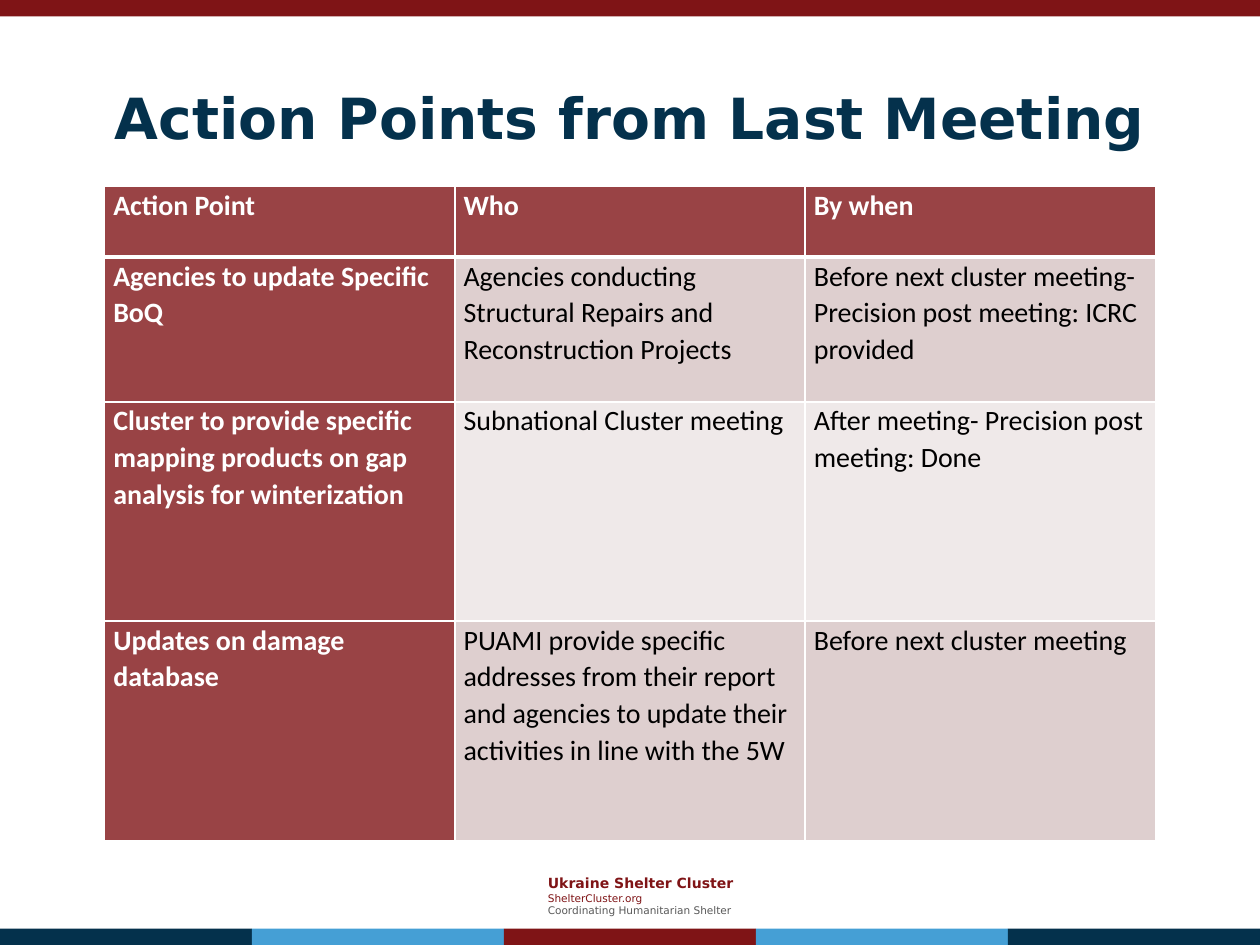
from lxml.etree import SubElement
from pptx import Presentation
from pptx.dml.color import RGBColor
from pptx.enum.shapes import MSO_SHAPE as SHAPE
from pptx.enum.text import MSO_ANCHOR as ANCHOR, PP_ALIGN as ALIGN
from pptx.oxml.ns import qn
from pptx.util import Inches, Pt

COLORS = {
    "red": "7F1416", "navy": "04314C", "blue": "459FD5", "gray": "595959",
    "header": "994345", "band_dark": "DECFCF", "band_light": "EFE9E9",
    "white": "FFFFFF", "black": "000000",
}
HEADING_FONT, TABLE_FONT = "DejaVu Sans", "Calibri"

ROWS = [
    ("Action Point", "Who", "By when"),
    ("Agencies to update Specific BoQ",
     "Agencies conducting Structural Repairs and Reconstruction Projects",
     "Before next cluster meeting- Precision post meeting: ICRC provided"),
    ("Cluster to provide specific mapping products on gap analysis for winterization",
     "Subnational Cluster meeting",
     "After meeting- Precision post meeting: Done"),
    ("Updates on damage database",
     "PUAMI provide specific addresses from their report and agencies to "
     "update their activities in line with the 5W",
     "Before next cluster meeting"),
]
ROW_HEIGHTS = [0.56, 1.15, 1.74, 1.74]
FOOTER = [
    ("Ukraine Shelter Cluster", 8, "red", True),
    ("ShelterCluster.org", 6, "red", False),
    ("Coordinating Humanitarian Shelter", 6, "gray", False),
]


def rgb(name):
    return RGBColor.from_string(COLORS[name])


def write(p, text, font, size, color, bold):
    p.text = text
    for r in p.runs:
        r.font.name, r.font.size, r.font.bold = font, Pt(size), bold
        r.font.color.rgb = rgb(color)


def add_bar(s, left, top, width, color):
    bar = s.shapes.add_shape(SHAPE.RECTANGLE, Inches(left), Inches(top),
                             Inches(width), Inches(0.13))
    bar.shadow.inherit = False
    bar.fill.solid()
    bar.fill.fore_color.rgb = rgb(color)
    bar.line.fill.background()


def add_text(s, left, top, width, height, lines, align=ALIGN.LEFT):
    box = s.shapes.add_textbox(Inches(left), Inches(top), Inches(width), Inches(height))
    tf = box.text_frame
    tf.word_wrap = True
    tf.vertical_anchor = ANCHOR.MIDDLE
    for i, (text, size, color, bold) in enumerate(lines):
        p = tf.add_paragraph() if i else tf.paragraphs[0]
        write(p, text, HEADING_FONT, size, color, bold)
        p.alignment = align


def set_borders(cell, **widths):
    tc_pr = cell._tc.get_or_add_tcPr()
    for side in "LRTB":
        ln = SubElement(tc_pr, qn(f"a:ln{side}"), w=str(Pt(widths.get(side, 1))))
        SubElement(SubElement(ln, qn("a:solidFill")), qn("a:srgbClr"), val=COLORS["white"])


def style_cell(cell, text, row, col):
    heading = row == 0 or col == 0
    band = "band_dark" if row % 2 else "band_light"
    # Thicker rule between the header row and the body
    set_borders(cell, **({"B": 3} if row == 0 else {"T": 3} if row == 1 else {}))
    cell.fill.solid()
    cell.fill.fore_color.rgb = rgb("header" if heading else band)
    cell.margin_left = cell.margin_right = Inches(0.07)
    cell.margin_top = cell.margin_bottom = 0
    p = cell.text_frame.paragraphs[0]
    write(p, text, TABLE_FONT, 16, "white" if heading else "black", heading)
    p.line_spacing = 1.07


def add_action_table(s):
    table = s.shapes.add_table(len(ROWS), len(ROWS[0]), Inches(0.83), Inches(1.48),
                               Inches(8.34), Inches(sum(ROW_HEIGHTS))).table
    for col in table.columns:
        col.width = Inches(2.78)
    for i, (texts, height) in enumerate(zip(ROWS, ROW_HEIGHTS)):
        table.rows[i].height = Inches(height)
        for j, text in enumerate(texts):
            style_cell(table.cell(i, j), text, i, j)


def main():
    prs = Presentation()
    prs.slide_width, prs.slide_height = Inches(10), Inches(7.5)
    s = prs.slides.add_slide(prs.slide_layouts[6])

    # Footer text and colour bars
    add_text(s, 4.25, 6.89, 1.9, 0.44, FOOTER)
    add_bar(s, 0, 0, 10, "red")
    for i, color in enumerate(["navy", "blue", "red", "blue", "navy"]):
        add_bar(s, i * 2, 7.37, 2, color)

    # Title and action points
    add_text(s, 0.5, 0.3, 9, 1.25,
             [("Action Points from Last Meeting", 32.4, "navy", True)], ALIGN.CENTER)
    add_action_table(s)
    prs.save("out.pptx")


if __name__ == "__main__":
    main()
